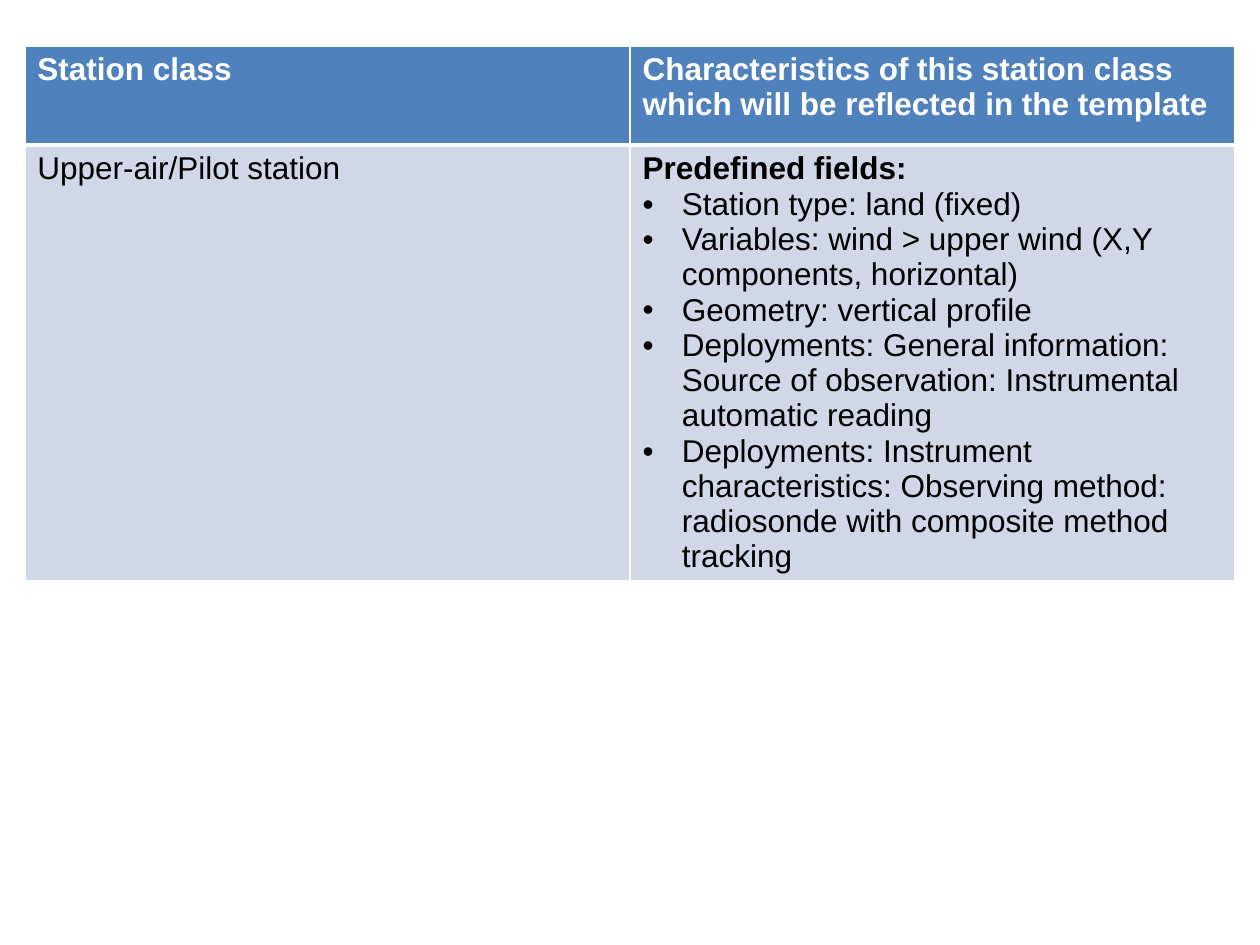
from dataclasses import dataclass

import pptx
import pptx.dml.color
import pptx.oxml.ns
import pptx.util
from lxml import etree

Pt = pptx.util.Pt


@dataclass(frozen=True)
class Theme:
    font: str = "Arial"
    size: float = 18
    header_fill: str = "4F81BD"
    body_fill: str = "D0D8E8"
    header_text: str = "FFFFFF"
    body_text: str = "000000"
    border: str = "FFFFFF"
    thin: float = 1
    thick: float = 3
    indent: float = 22.5


THEME = Theme()
HEADERS = [
    "Station class",
    "Characteristics of this station class which will be reflected in the template",
]
STATION = "Upper-air/Pilot station"
FIELDS_HEADING = "Predefined fields:"
FIELDS = [
    "Station type: land (fixed)",
    "Variables: wind > upper wind (X,Y components, horizontal)",
    "Geometry: vertical profile",
    "Deployments: General information: Source of observation: Instrumental automatic reading",
    "Deployments: Instrument characteristics: Observing method: radiosonde with composite method tracking",
]


def rgb(value):
    return pptx.dml.color.RGBColor.from_string(value)


def add_element(parent, tag, **attributes):
    return etree.SubElement(parent, pptx.oxml.ns.qn(tag), attributes)


def add_bullet(paragraph):
    properties = paragraph._p.get_or_add_pPr()
    indent = Pt(THEME.indent)
    properties.set("marL", str(indent))
    properties.set("indent", str(-indent))
    add_element(properties, "a:buFont", typeface=THEME.font)
    add_element(properties, "a:buChar", char="•")


def style_cell(cell, fill, top, bottom):
    properties = cell._tc.get_or_add_tcPr()
    widths = {"L": THEME.thin, "R": THEME.thin, "T": top, "B": bottom}
    for side, width in widths.items():
        line = add_element(properties, f"a:ln{side}", w=str(Pt(width)))
        add_element(add_element(line, "a:solidFill"), "a:srgbClr", val=THEME.border)
    cell.fill.solid()
    cell.fill.fore_color.rgb = rgb(fill)


def write_cell(cell, lines, color, bold_first=False, bulleted=False):
    cell.text_frame.text = "\n".join(lines)
    for index, paragraph in enumerate(cell.text_frame.paragraphs):
        if bulleted and index > 0:
            add_bullet(paragraph)
        for run in paragraph.runs:
            run.font.name = THEME.font
            run.font.size = Pt(THEME.size)
            run.font.bold = bold_first and index == 0
            run.font.color.rgb = rgb(color)


def add_station_table(slide, left, top, width, height, row_height):
    shape = slide.shapes.add_table(2, 2, Pt(left), Pt(top), Pt(width), Pt(height))
    table = shape.table
    for column in table.columns:
        column.width = Pt(width / 2)
    for row in table.rows:
        row.height = Pt(row_height)
    shape.height = Pt(height)
    for index, header in enumerate(HEADERS):
        style_cell(table.cell(0, index), THEME.header_fill, THEME.thin, THEME.thick)
        write_cell(table.cell(0, index), [header], THEME.header_text, bold_first=True)
        style_cell(table.cell(1, index), THEME.body_fill, THEME.thick, THEME.thin)
    write_cell(table.cell(1, 0), [STATION], THEME.body_text)
    write_cell(
        table.cell(1, 1),
        [FIELDS_HEADING, *FIELDS],
        THEME.body_text,
        bold_first=True,
        bulleted=True,
    )


def main():
    presentation = pptx.Presentation()
    presentation.slide_width = Pt(720)
    presentation.slide_height = Pt(540)
    slide = presentation.slides.add_slide(presentation.slide_layouts[6])
    add_station_table(slide, 14.2, 26.2, 691.6, 323.3, 56.7)
    presentation.save("out.pptx")


if __name__ == "__main__":
    main()
